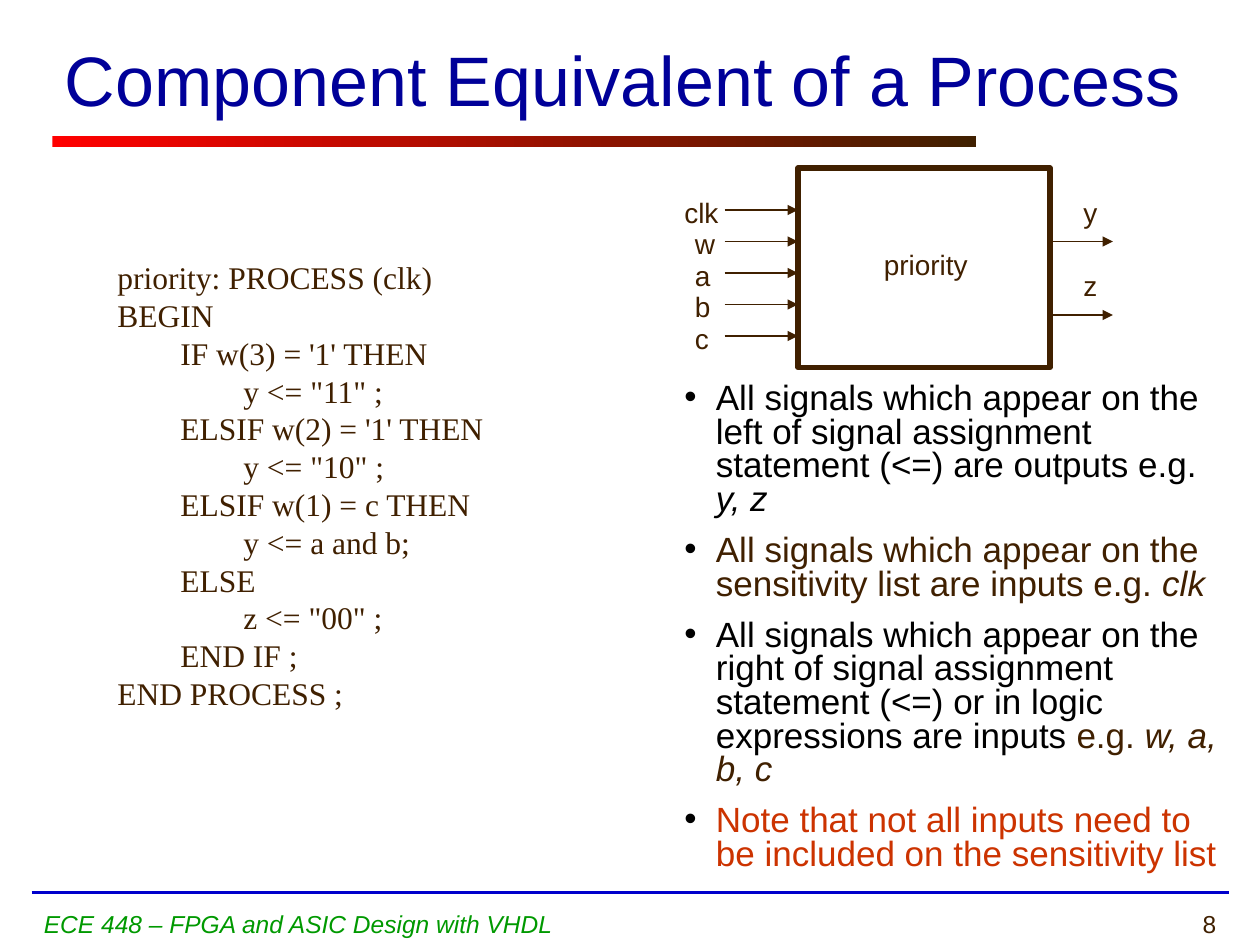
from lxml import etree
from pptx import Presentation
from pptx.dml.color import RGBColor
from pptx.enum.shapes import MSO_CONNECTOR, MSO_SHAPE
from pptx.enum.text import MSO_ANCHOR, PP_ALIGN
from pptx.oxml.ns import qn
from pptx.util import Pt

STRAIGHT = MSO_CONNECTOR.STRAIGHT
RECTANGLE = MSO_SHAPE.RECTANGLE
MIDDLE = MSO_ANCHOR.MIDDLE
RIGHT = PP_ALIGN.RIGHT

BLACK = RGBColor(0x00, 0x00, 0x00)
BROWN = RGBColor(0x40, 0x20, 0x00)
RED = RGBColor(0xFF, 0x00, 0x00)
RUST = RGBColor(0xCC, 0x33, 0x00)
GREEN = RGBColor(0x00, 0x99, 0x00)
NAVY = RGBColor(0x00, 0x00, 0x99)
BLUE = RGBColor(0x00, 0x00, 0xCC)

SANS = "Arial"
SERIF = "Times New Roman"
LINE_FACTOR = 1.2

CODE = [
    (1, "priority: PROCESS (clk)"),
    (1, "BEGIN"),
    (2, "IF w(3) = '1' THEN"),
    (3, 'y <= "11" ;'),
    (2, "ELSIF w(2) = '1' THEN"),
    (3, 'y <= "10" ;'),
    (2, "ELSIF w(1) = c THEN"),
    (3, "y <= a and b;"),
    (2, "ELSE"),
    (3, 'z <= "00" ;'),
    (2, "END IF ;"),
    (1, "END PROCESS ;"),
]

NOTES = [
    [("All signals which appear on the left of signal assignment statement (<=) are outputs e.g. ", BLACK, False),
     ("y, z", BLACK, True)],
    [("All signals which appear on the sensitivity list are inputs e.g. ", BROWN, False),
     ("clk", BROWN, True)],
    [("All signals which appear on the right of signal assignment statement (<=) or in logic expressions are inputs ",
      BLACK, False),
     ("e.g. ", BROWN, False),
     ("w, a, b, c", BROWN, True)],
    [("Note that not all inputs need to be included on the sensitivity list", RUST, False)],
]


def add_text_frame(page, left, top, width, height):
    box = page.shapes.add_textbox(Pt(left), Pt(top), Pt(width), Pt(height))
    box.text_frame.word_wrap = True
    return box.text_frame


def style_font(font, size, color, name=SANS, italic=False):
    font.name = name
    font.size = Pt(size)
    font.color.rgb = color
    font.italic = italic


def set_indent(para, left, first=0):
    properties = para._p.get_or_add_pPr()
    properties.set("marL", str(Pt(left)))
    properties.set("indent", str(Pt(first)))
    return properties


def add_bullet(para, color):
    properties = set_indent(para, 90, -18)
    tint = etree.SubElement(properties, qn("a:buClr"))
    etree.SubElement(tint, qn("a:srgbClr")).set("val", str(color))
    etree.SubElement(properties, qn("a:buFont")).set("typeface", SANS)
    etree.SubElement(properties, qn("a:buChar")).set("char", "•")


def add_line(page, start, end, color, weight, arrow=False):
    line = page.shapes.add_connector(STRAIGHT, *(Pt(value) for value in (*start, *end)))
    line.line.color.rgb = color
    line.line.width = Pt(weight)
    if arrow:
        outline = line.line._get_or_add_ln()
        etree.SubElement(outline, qn("a:tailEnd")).set("type", "triangle")
    etree.SubElement(line._element.spPr, qn("a:effectLst"))


def add_label(page, text, left, top, width):
    frame = add_text_frame(page, left, top, width, 27)
    frame.text = text
    para = frame.paragraphs[0]
    set_indent(para, 90, -18)
    para.line_spacing = Pt(16 * LINE_FACTOR)
    style_font(para.runs[0].font, 16, BROWN)


def add_title(page, left, top, width, height):
    frame = add_text_frame(page, left, top, width, height)
    frame.vertical_anchor = MIDDLE
    frame.text = "Component Equivalent of a Process"
    style_font(frame.paragraphs[0].runs[0].font, 40, NAVY)
    bar = page.shapes.add_shape(RECTANGLE, Pt(left), Pt(top + 78), Pt(528), Pt(6))
    bar.shadow.inherit = False
    bar.line.fill.background()
    bar.fill.gradient()
    bar.fill.gradient_angle = 0
    for stop, color in zip(bar.fill.gradient_stops, (RED, BROWN)):
        stop.color.rgb = color


def add_code(page, left, top, width, height):
    frame = add_text_frame(page, left, top, width, height)
    frame.text = "\n".join(text for _, text in CODE)
    for para, (depth, _) in zip(frame.paragraphs, CODE):
        set_indent(para, 36 * depth)
        para.line_spacing = Pt(18 * LINE_FACTOR)
        style_font(para.runs[0].font, 18, BROWN, SERIF)


def add_component(page, left, top, width, height):
    right = left + width
    block = page.shapes.add_shape(RECTANGLE, Pt(left), Pt(top), Pt(width), Pt(height))
    block.shadow.inherit = False
    block.fill.background()
    block.line.color.rgb = BROWN
    block.line.width = Pt(3)
    add_label(page, "priority", left - 30, top + 42, 138)
    inputs = [("clk", 144, 114), ("w", 138, 90), ("a", 138, 90), ("b", 138, 102), ("c", 138, 102)]
    for row, (name, offset, label_width) in enumerate(inputs):
        y = top + 24 + 18 * row
        add_label(page, name, left - offset, y - 12, label_width)
        add_line(page, (left - 42, y), (left, y), BROWN, 0.75, arrow=True)
    for row, name in enumerate("yz"):
        y = top + 42 + 42 * row
        add_label(page, name, right - 60, y - 30, 96)
        add_line(page, (right, y), (right + 36, y), BROWN, 0.75, arrow=True)


def add_notes(page, left, top, width, height):
    frame = add_text_frame(page, left, top, width, height)
    for index, parts in enumerate(NOTES):
        para = frame.add_paragraph() if index else frame.paragraphs[0]
        add_bullet(para, BLACK)
        para.line_spacing = Pt(20 * LINE_FACTOR * 0.8)
        if index:
            para.space_before = Pt(10)
        for text, color, italic in parts:
            span = para.add_run()
            span.text = text
            style_font(span.font, 20, color, italic=italic)


def add_footer(page, left, top, width, height):
    add_line(page, (left, top), (left + width, top), BLUE, 2.25)
    course = add_text_frame(page, left, top + 6, 528, height)
    course.text = "ECE 448 – FPGA and ASIC Design with VHDL"
    style_font(course.paragraphs[0].runs[0].font, 14, GREEN, italic=True)
    number = add_text_frame(page, left + 528, top + 6, width - 528, height)
    number.text = "8"
    number.paragraphs[0].alignment = RIGHT
    style_font(number.paragraphs[0].runs[0].font, 14, BROWN)


def main():
    deck = Presentation()
    deck.slide_width, deck.slide_height = Pt(720), Pt(540)
    page = deck.slides.add_slide(deck.slide_layouts[6])
    add_footer(page, 18, 510, 684, 24)
    add_title(page, 30, 0, 660, 90)
    add_notes(page, 312, 216, 396, 60)
    add_code(page, 24, 144, 324, 266.4)
    add_component(page, 456, 96, 144, 114)
    deck.save("out.pptx")


if __name__ == "__main__":
    main()
